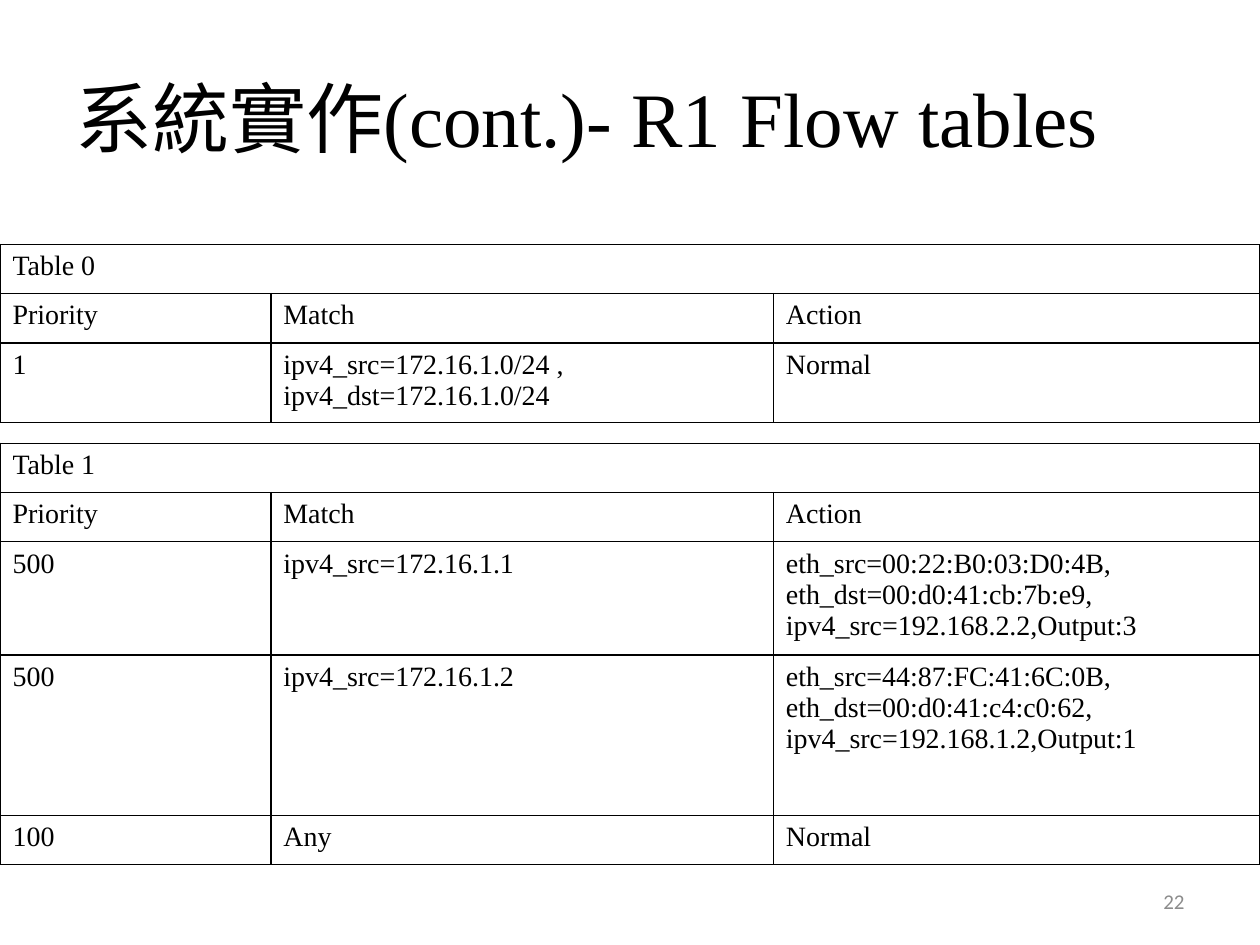
from lxml.etree import SubElement
from pptx import Presentation
from pptx.dml.color import RGBColor
from pptx.enum.text import MSO_ANCHOR, PP_ALIGN
from pptx.oxml.ns import qn
from pptx.util import Cm, Pt

# Content: "\v" breaks a line, "\n" starts a paragraph
TITLE = "系統實作(cont.)- R1 Flow tables"
SLIDE_NUMBER = "22"
HEADINGS = ("Priority", "Match", "Action")
FLOW_TABLES = [
    {
        "name": "Table 0",
        "top": 4.93,
        "flows": [
            ("1", "ipv4_src=172.16.1.0/24 ,\vipv4_dst=172.16.1.0/24", "Normal"),
        ],
        "tall_rows": {},
    },
    {
        "name": "Table 1",
        "top": 8.94,
        "flows": [
            ("500", "ipv4_src=172.16.1.1",
             "eth_src=00:22:B0:03:D0:4B,\veth_dst=00:d0:41:cb:7b:e9,\n"
             "ipv4_src=192.168.2.2,Output:3"),
            ("500", "ipv4_src=172.16.1.2",
             "eth_src=44:87:FC:41:6C:0B,\veth_dst=00:d0:41:c4:c0:62,\n"
             "ipv4_src=192.168.1.2,Output:1"),
            ("100", "Any", "Normal"),
        ],
        "tall_rows": {3: 3.23},
    },
]

# Layout in centimetres
COLUMN_WIDTHS = (5.46, 10.13, 9.81)
ROW_HEIGHT = 0.99

THEME = {
    "title": ("Times New Roman", 44, "000000"),
    "cell": ("Times New Roman", 16, "000000"),
    "number": ("Calibri", 12, "8C8C8C"),
    "background": "FFFFFF",
    "border": "000000",
    "border_width": 1,
}


def format_text(text_frame, style):
    name, size, color = THEME[style]
    for paragraph in text_frame.paragraphs:
        for run in paragraph.runs:
            run.font.name = name
            run.font.size = Pt(size)
            run.font.color.rgb = RGBColor.from_string(color)


def add_text(slide, text, box, style, alignment):
    shape = slide.shapes.add_textbox(*(Cm(length) for length in box))
    text_frame = shape.text_frame
    text_frame.word_wrap = True
    text_frame.vertical_anchor = MSO_ANCHOR.MIDDLE
    text_frame.text = text
    text_frame.paragraphs[0].alignment = alignment
    format_text(text_frame, style)


def add_borders(cell):
    properties = cell._tc.get_or_add_tcPr()
    for side in ("a:lnL", "a:lnR", "a:lnT", "a:lnB"):
        line = SubElement(properties, qn(side), w=str(Pt(THEME["border_width"])))
        fill = SubElement(line, qn("a:solidFill"))
        SubElement(fill, qn("a:srgbClr"), val=THEME["border"])


def add_flow_table(slide, content):
    rows = [(content["name"], "", ""), HEADINGS, *content["flows"]]
    heights = [content["tall_rows"].get(index, ROW_HEIGHT) for index in range(len(rows))]
    table = slide.shapes.add_table(
        len(rows), len(HEADINGS), Cm(0), Cm(content["top"]),
        Cm(sum(COLUMN_WIDTHS)), Cm(sum(heights))).table
    table.first_row = False
    table.horz_banding = False
    for column, width in zip(table.columns, COLUMN_WIDTHS):
        column.width = Cm(width)
    for row, height, texts in zip(table.rows, heights, rows):
        row.height = Cm(height)
        for cell, text in zip(row.cells, texts):
            cell.text_frame.text = text
            format_text(cell.text_frame, "cell")
            add_borders(cell)
            cell.fill.solid()
            cell.fill.fore_color.rgb = RGBColor.from_string(THEME["background"])
    # The table name spans the first row
    table.cell(0, 0).merge(table.cell(0, len(HEADINGS) - 1))


def main():
    presentation = Presentation()
    presentation.slide_width = Cm(25.4)
    presentation.slide_height = Cm(19.05)
    slide = presentation.slides.add_slide(presentation.slide_layouts[6])

    # Title and slide number
    add_text(slide, TITLE, (1.27, 0.76, 22.86, 3.18), "title", PP_ALIGN.LEFT)
    add_text(slide, SLIDE_NUMBER, (18.2, 17.66, 5.93, 1.01), "number", PP_ALIGN.RIGHT)

    # Flow tables
    for content in FLOW_TABLES:
        add_flow_table(slide, content)

    presentation.save("out.pptx")


if __name__ == "__main__":
    main()
